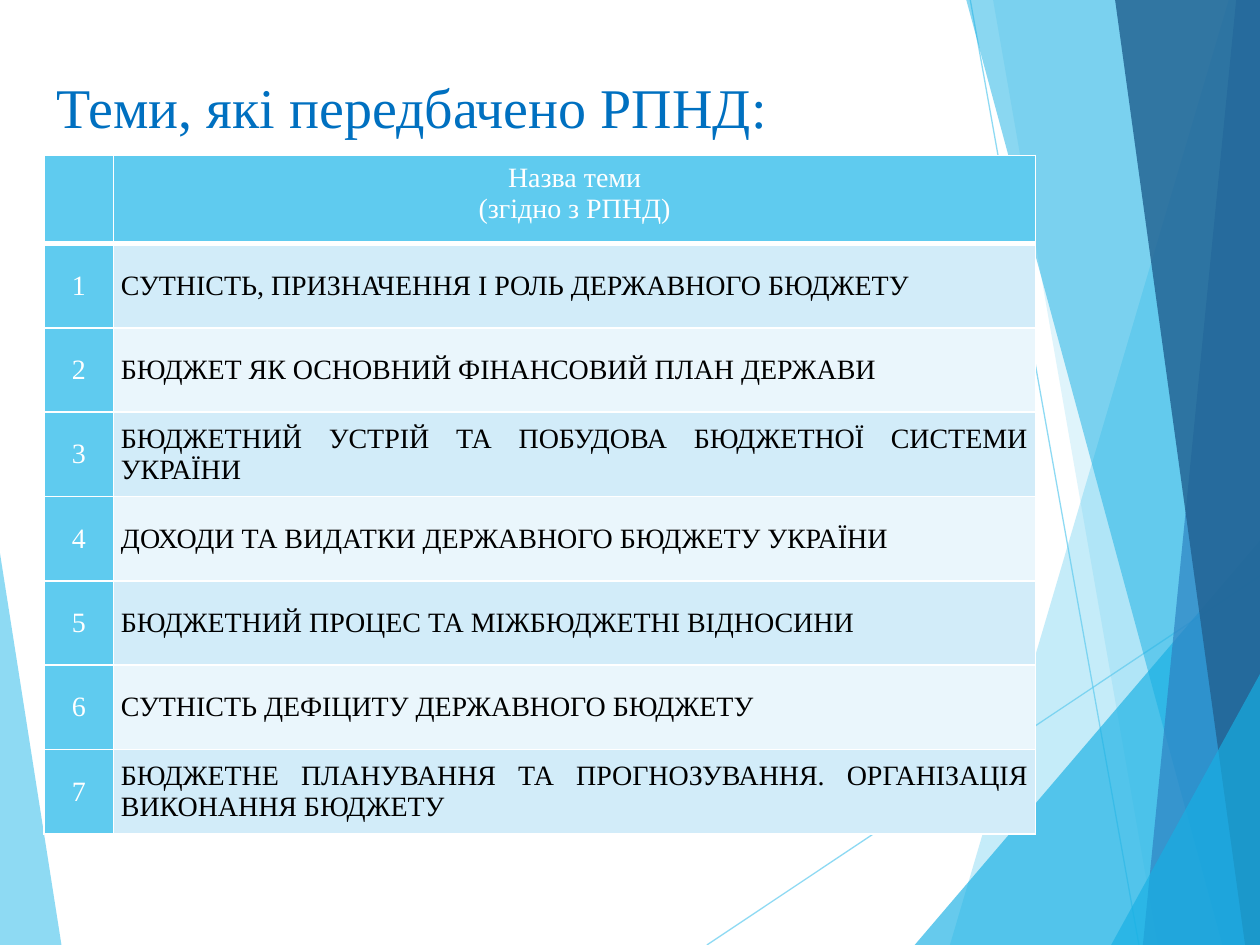
import pptx
import pptx.util
import pptx.dml.color
import pptx.enum.shapes
import pptx.enum.text
import pptx.oxml
import pptx.oxml.ns
from pptx.util import Cm, Pt
from pptx.dml.color import RGBColor

TITLE = "Теми, які передбачено РПНД:"
HEADER = ["Назва теми", "(згідно з РПНД)"]
TOPICS = [
    "СУТНІСТЬ, ПРИЗНАЧЕННЯ І РОЛЬ ДЕРЖАВНОГО БЮДЖЕТУ",
    "БЮДЖЕТ ЯК ОСНОВНИЙ ФІНАНСОВИЙ ПЛАН ДЕРЖАВИ",
    "БЮДЖЕТНИЙ УСТРІЙ ТА ПОБУДОВА БЮДЖЕТНОЇ СИСТЕМИ УКРАЇНИ",
    "ДОХОДИ ТА ВИДАТКИ ДЕРЖАВНОГО БЮДЖЕТУ УКРАЇНИ",
    "БЮДЖЕТНИЙ ПРОЦЕС ТА МІЖБЮДЖЕТНІ ВІДНОСИНИ",
    "СУТНІСТЬ ДЕФІЦИТУ ДЕРЖАВНОГО БЮДЖЕТУ",
    "БЮДЖЕТНЕ ПЛАНУВАННЯ ТА ПРОГНОЗУВАННЯ. ОРГАНІЗАЦІЯ ВИКОНАННЯ БЮДЖЕТУ",
]

FONT = "Times New Roman"
WHITE = RGBColor(0xFF, 0xFF, 0xFF)
BLACK = RGBColor(0, 0, 0)
SKY = RGBColor(0x5F, 0xCB, 0xEF)
CYAN = RGBColor(0x17, 0xB0, 0xE4)
BLUE = RGBColor(0x2E, 0x83, 0xC3)
NAVY = RGBColor(0x22, 0x62, 0x92)
TITLE_BLUE = RGBColor(0x00, 0x70, 0xC0)
ROW_FILLS = [RGBColor(0xD2, 0xEC, 0xF9), RGBColor(0xEA, 0xF6, 0xFC)]

WIDTH, HEIGHT = 25.4, 19.05


def band(top_x, bottom_x):
    """Corners of a slanted band that reaches the right edge of the slide."""
    return [(top_x, 0), (bottom_x, HEIGHT), (WIDTH, HEIGHT), (WIDTH, 0)]


def corner(bottom_x, right_y):
    """Corners of a triangle in the bottom right of the slide."""
    return [(bottom_x, HEIGHT), (WIDTH, right_y), (WIDTH, HEIGHT)]


# corners in cm, colour, opacity in percent
LEFT_WEDGE = ([(0, 11.15), (1.24, HEIGHT), (0, HEIGHT)], SKY, 70)
RIGHT_FACETS = [
    (band(24.77, 19.15), SKY, 36),
    (band(20.02, 23.34), SKY, 20),
    (corner(18.44, 10.9), CYAN, 66),
    (band(19.48, 24.64), CYAN, 50),
    (band(24.92, 23.04), BLUE, 70),
    (band(22.48, 25.1), NAVY, 82),
    (corner(22.4, 13.59), CYAN, 66),
]
THIN_LINES = [(14.25, HEIGHT, WIDTH, 11.61), (19.56, 0, 22.96, HEIGHT)]


def append_xml(parent, tag, content=""):
    namespace = pptx.oxml.ns.nsdecls("a")
    parent.append(pptx.oxml.parse_xml(f"<a:{tag} {namespace}>{content}</a:{tag}>"))


def set_opacity(fill, percent):
    colour = fill._xPr.find(".//" + pptx.oxml.ns.qn("a:srgbClr"))
    colour.append(pptx.oxml.parse_xml(
        f'<a:alpha {pptx.oxml.ns.nsdecls("a")} val="{percent * 1000}"/>'))


def add_facet(page, corners, colour, opacity):
    points = [(Cm(x), Cm(y)) for x, y in corners]
    builder = page.shapes.build_freeform(*points[0])
    builder.add_line_segments(points[1:], close=True)
    facet = builder.convert_to_shape()
    facet.shadow.inherit = False
    facet.fill.solid()
    facet.fill.fore_color.rgb = colour
    set_opacity(facet.fill, opacity)
    facet.line.fill.background()


def add_thin_line(page, ends):
    line = page.shapes.add_connector(
        pptx.enum.shapes.MSO_CONNECTOR.STRAIGHT, *[Cm(value) for value in ends])
    line.line.width = Pt(0.75)
    line.line.color.rgb = SKY
    set_opacity(line.line.fill, 70)
    append_xml(line._element.spPr, "effectLst")


def add_title(page):
    box = page.shapes.add_textbox(Cm(0.89), Cm(1.24), Cm(21.03), Cm(1.8))
    frame = box.text_frame
    frame.word_wrap = True
    frame.vertical_anchor = pptx.enum.text.MSO_ANCHOR.MIDDLE
    span = frame.paragraphs[0].add_run()
    span.text = TITLE
    span.font.size = Pt(32)
    span.font.color.rgb = TITLE_BLUE
    append_xml(span.font._element, "effectLst",
               '<a:outerShdw blurRad="38100" dist="38100" dir="2700000">'
               '<a:srgbClr val="000000"><a:alpha val="43000"/></a:srgbClr></a:outerShdw>')
    span.font.name = FONT


def style_cell(cell, lines, fill, colour, align, anchor, top=1, bottom=1):
    """Write the lines and set the look; top and bottom are border widths in points."""
    cell.margin_left = cell.margin_right = Cm(0.15)
    cell.margin_top = cell.margin_bottom = Cm(0.15)
    cell.vertical_anchor = anchor
    for side, width in (("L", 1), ("R", 1), ("T", top), ("B", bottom)):
        border = pptx.oxml.parse_xml(
            f'<a:ln{side} {pptx.oxml.ns.nsdecls("a")} w="{Pt(width)}">'
            f'<a:solidFill><a:srgbClr val="{WHITE}"/></a:solidFill></a:ln{side}>')
        cell._tc.get_or_add_tcPr().append(border)
    cell.fill.solid()
    cell.fill.fore_color.rgb = fill
    cell.text = "\n".join(lines)
    for para in cell.text_frame.paragraphs:
        para.alignment = align
        para.font.name = FONT
        para.font.size = Pt(16)
        para.font.bold = False
        para.font.color.rgb = colour


def add_topics_table(page):
    align = pptx.enum.text.PP_ALIGN
    anchor = pptx.enum.text.MSO_ANCHOR
    row_count = len(TOPICS) + 1
    table = page.shapes.add_table(
        row_count, 2, Cm(0.89), Cm(3.13), Cm(19.99), Cm(13.68)).table
    table.columns[0].width, table.columns[1].width = Cm(1.4), Cm(18.59)
    for index, row in enumerate(table.rows):
        row.height = Cm(1.7 if index else 1.78)
    for column, lines in enumerate([[], HEADER]):
        style_cell(table.cell(0, column), lines, SKY, WHITE,
                   align.CENTER, anchor.TOP, bottom=3)
    for number, topic in enumerate(TOPICS, start=1):
        top = 3 if number == 1 else 1
        style_cell(table.cell(number, 0), [str(number)], SKY, WHITE,
                   align.CENTER, anchor.MIDDLE, top)
        style_cell(table.cell(number, 1), [topic], ROW_FILLS[(number - 1) % 2], BLACK,
                   align.JUSTIFY, anchor.MIDDLE, top)


def main():
    deck = pptx.Presentation()
    deck.slide_width, deck.slide_height = Cm(WIDTH), Cm(HEIGHT)
    page = deck.slides.add_slide(deck.slide_layouts[6])
    add_facet(page, *LEFT_WEDGE)
    for ends in THIN_LINES:
        add_thin_line(page, ends)
    for facet in RIGHT_FACETS:
        add_facet(page, *facet)
    add_topics_table(page)
    add_title(page)
    deck.save("out.pptx")


if __name__ == "__main__":
    main()
